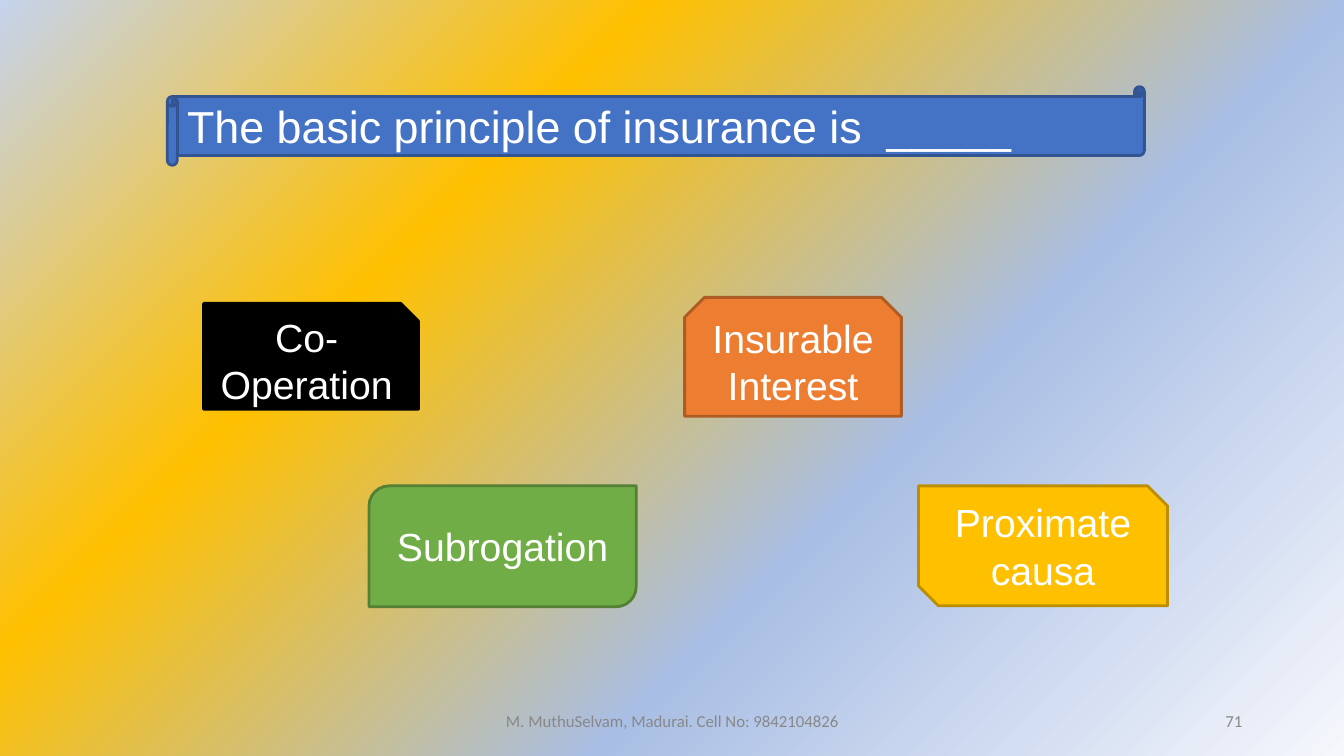
from lxml import etree
from pptx import Presentation
from pptx import util as u
from pptx.dml.color import RGBColor
from pptx.enum import shapes, text
from pptx.oxml.ns import qn

COLOURS = {
    "white": "FFFFFF", "grey": "888888", "black": "000000",
    "blue": "4472C4", "blue edge": "325491",
    "orange": "ED7D31", "orange edge": "AF5C24",
    "gold": "FFC000", "gold edge": "BD8E00",
    "green": "70AD47", "green edge": "538035",
    "mist": "C5D3ED", "lavender": "A9BEE4", "pale": "F5F7FC",
}
SHAPE = shapes.MSO_SHAPE
ALIGN = text.PP_ALIGN


def rgb(name):
    return RGBColor.from_string(COLOURS[name])


class QuizSlide:
    """Holds the text styles and the current slide."""
    heading_font = "Arial"
    footer_font = "Calibri"
    footer_top, footer_height = 6.95, 0.4

    def __init__(self, deck):
        self.page = deck.slides.add_slide(deck.slide_layouts[6])

    def background(self, stops):
        """Diagonal gradient from the top left to the bottom right."""
        fill = self.page.background.fill
        fill.gradient()
        fill.gradient_angle = 315
        stop_list = next(self.page.element.iter(qn("a:gsLst")))
        for stop in list(stop_list):
            stop_list.remove(stop)
        for percent, name in stops:
            stop = etree.SubElement(stop_list, qn("a:gs"), pos=str(percent * 1000))
            etree.SubElement(stop, qn("a:srgbClr"), val=COLOURS[name])

    def add_words(self, box, words, font, size, colour, align):
        frame = box.text_frame
        frame.word_wrap = True
        frame.vertical_anchor = text.MSO_ANCHOR.MIDDLE
        para = frame.paragraphs[0]
        para.alignment = align
        span = para.add_run()
        span.text = words
        span.font.name = font
        span.font.size = u.Pt(size)
        span.font.color.rgb = rgb(colour)

    def panel(self, kind, place, words, fill, edge, size=28, align=ALIGN.CENTER):
        box = self.page.shapes.add_shape(kind, *map(u.Inches, place))
        box.shadow.inherit = False
        box.fill.solid()
        box.fill.fore_color.rgb = rgb(fill)
        box.line.color.rgb = rgb(edge)
        box.line.width = u.Pt(2)
        self.add_words(box, words, self.heading_font, size, "white", align)

    def footer(self, left, width, words, align):
        place = (left, self.footer_top, width, self.footer_height)
        box = self.page.shapes.add_textbox(*map(u.Inches, place))
        self.add_words(box, words, self.footer_font, 12, "grey", align)


def main():
    deck = Presentation()
    deck.slide_width, deck.slide_height = u.Inches(13.33), u.Inches(7.5)
    quiz = QuizSlide(deck)
    quiz.background([(0, "mist"), (31, "gold"), (64, "lavender"), (100, "pale")])

    # Question
    quiz.panel(SHAPE.HORIZONTAL_SCROLL, (1.66, 0.86, 9.69, 0.78),
               "The basic principle of insurance is  _____",
               "blue", "blue edge", size=32, align=ALIGN.LEFT)

    # Answers
    answers = [
        (SHAPE.SNIP_1_RECTANGLE, (2.02, 3.01, 2.13, 1.05),
         "Co-Operation", "black", "black"),
        (SHAPE.SNIP_2_SAME_RECTANGLE, (6.79, 2.95, 2.15, 1.18),
         "Insurable Interest", "orange", "orange edge"),
        (SHAPE.SNIP_2_DIAG_RECTANGLE, (9.11, 4.82, 2.47, 1.19),
         "Proximate causa", "gold", "gold edge"),
        (SHAPE.ROUND_2_DIAG_RECTANGLE, (3.66, 4.82, 2.65, 1.2),
         "Subrogation", "green", "green edge"),
    ]
    for answer in answers:
        quiz.panel(*answer)

    # Footer and page number
    quiz.footer(4.42, 4.5, "M. MuthuSelvam, Madurai. Cell No: 9842104826", ALIGN.CENTER)
    quiz.footer(9.42, 3, "71", ALIGN.RIGHT)

    deck.save("out.pptx")


if __name__ == "__main__":
    main()
